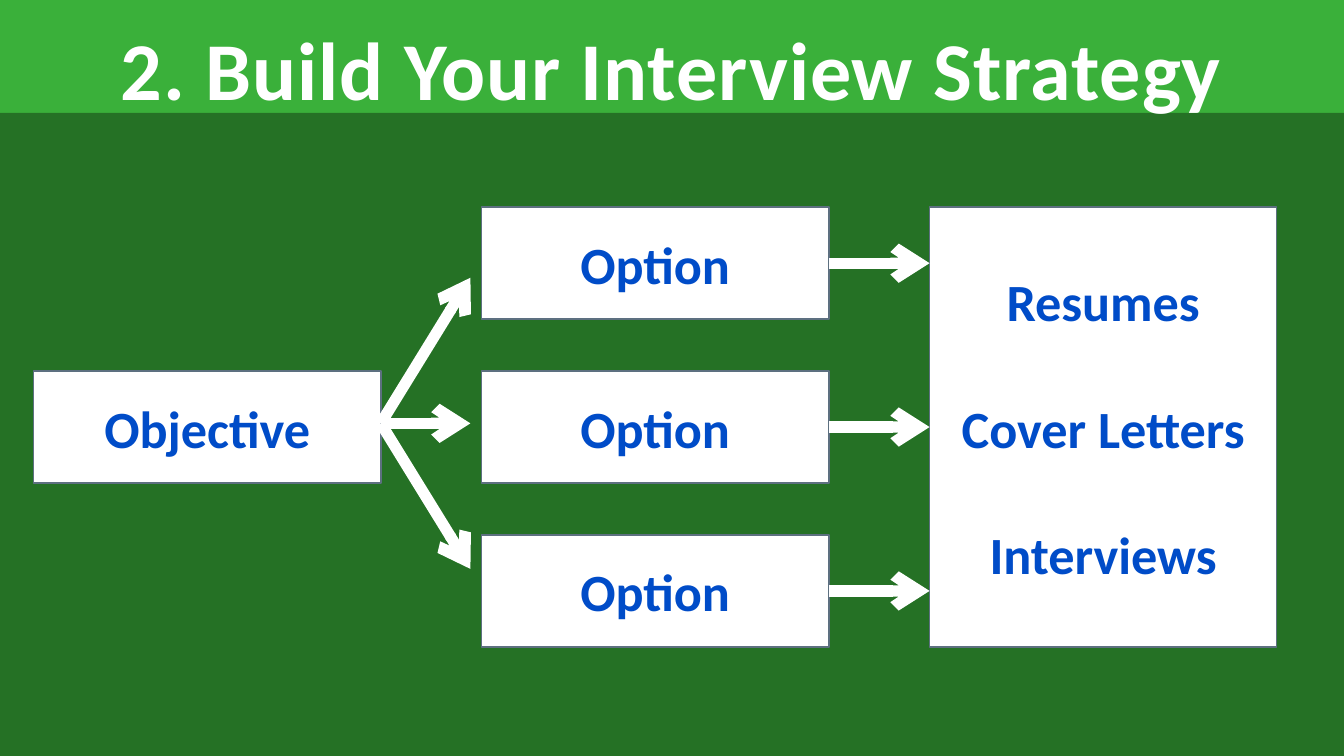
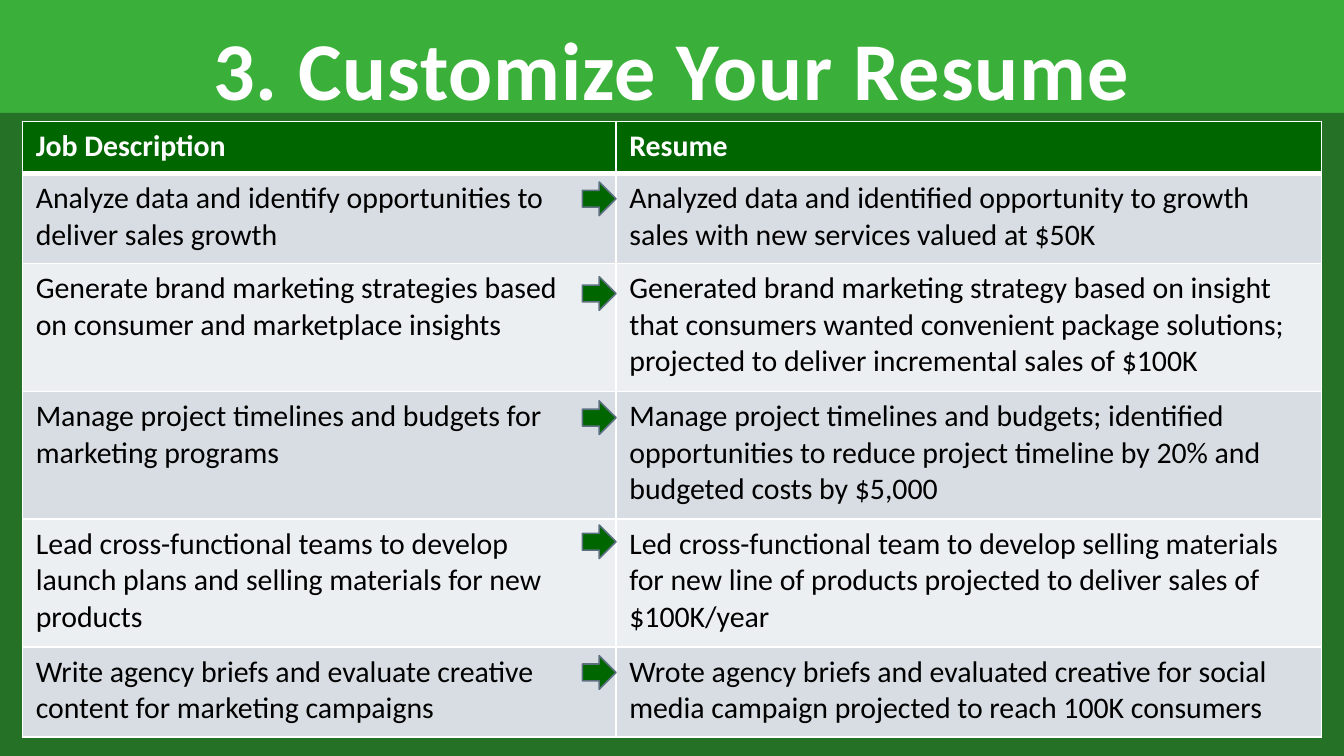
from lxml.etree import SubElement
from pptx import Presentation
from pptx.dml.color import RGBColor as RGB
from pptx.enum.shapes import MSO_CONNECTOR as Line, MSO_SHAPE as Kind
from pptx.enum.text import MSO_ANCHOR as Anchor, MSO_AUTO_SIZE as Fit, PP_ALIGN as Align
from pptx.oxml import parse_xml
from pptx.oxml.ns import nsdecls, qn
from pptx.util import Pt

FACE = "Calibri"
WHITE = RGB(0xFF, 0xFF, 0xFF)
BLACK = RGB(0, 0, 0)
GRAY = RGB(0x3F, 0x3F, 0x3F)
LIME = RGB(0x3A, 0xB0, 0x3A)
GREEN = RGB(0x25, 0x71, 0x25)
DEEP = RGB(0, 0x66, 0)
BLUE = RGB(0, 0x4C, 0xC8)
SLATE = RGB(0x5D, 0x70, 0x80)
BANDS = RGB(0xD8, 0xDD, 0xE3), RGB(0xEC, 0xEF, 0xF1)

WIDE, HIGH, HEAD = 720, 405, 60.5

PAIRS = [
    ("Job Description", "Resume"),
    ("Analyze data and identify opportunities to deliver sales growth",
     "Analyzed data and identified opportunity to growth sales with new services "
     "valued at $50K"),
    ("Generate brand marketing strategies based\non consumer and marketplace insights",
     "Generated brand marketing strategy based on insight that consumers wanted "
     "convenient package solutions; projected to deliver incremental sales of $100K"),
    ("Manage project timelines and budgets for marketing programs",
     "Manage project timelines and budgets; identified opportunities to reduce "
     "project timeline by 20% and budgeted costs by $5,000"),
    ("Lead cross-functional teams to develop\n"
     "launch plans and selling materials for new products",
     "Led cross-functional team to develop selling materials for new line of "
     "products projected to deliver sales of $100K/year"),
    ("Write agency briefs and evaluate creative content for marketing campaigns",
     "Wrote agency briefs and evaluated creative for social media campaign "
     "projected to reach 100K consumers"),
]
COLS = 318, 378
ROWS = 28, 48.25, 68.5, 68.5, 68.5, 48.25
DROPS = 4.5, 7, 5, 3, 4.5  # gap above the marker in each body row


def style(par, size, color, bold=False):
    font = par.font
    font.name, font.size, font.bold = FACE, Pt(size), bold
    font.color.rgb = color


def add_block(slide, kind, box, fill, edge=None):
    shape = slide.shapes.add_shape(kind, *map(Pt, box))
    shape.shadow.inherit = False
    shape.fill.solid()
    shape.fill.fore_color.rgb = fill
    if edge is None:
        shape.line.fill.background()
    else:
        shape.line.color.rgb = edge
        shape.line.width = Pt(0.85)
    return shape


def add_card(slide, box, *words):
    """Draw a white box with one spaced, centred paragraph per word."""
    frame = add_block(slide, Kind.RECTANGLE, box, WHITE, SLATE).text_frame
    frame.word_wrap = True
    frame.vertical_anchor = Anchor.MIDDLE
    frame.text = "\n".join(words)
    for i, par in enumerate(frame.paragraphs):
        par.alignment = Align.CENTER
        par.space_before = Pt(34 if i else 0)
        style(par, 28, BLUE, True)


def add_arrow(shapes, *ends):
    arrow = shapes.add_connector(Line.STRAIGHT, *map(Pt, ends))
    arrow.line.color.rgb = WHITE
    arrow.line.width = Pt(6)
    SubElement(arrow.line._get_or_add_ln(), qn("a:tailEnd"), type="arrow")
    SubElement(arrow._element.spPr, qn("a:effectLst"))


def dress_layout(deck, layout):
    """Give the layout its backdrop and the two colour bands."""
    fill = layout.background.fill
    fill.gradient()
    fill.gradient_angle = 270
    for stop, color, place in zip(fill.gradient_stops, (GRAY, BLACK), (0, 0.31)):
        stop.color.rgb = color
        stop.position = place
    slide = deck.slides[0]
    bands = (0, HEAD, WIDE, HIGH - HEAD, GREEN), (0, 0, WIDE, HEAD, LIME)
    for *box, color in bands:
        band = add_block(slide, Kind.RECTANGLE, box, color)
        layout.shapes.element.insert(2, band._element)


def add_slide(deck, layout, text):
    slide = deck.slides.add_slide(layout)
    title = slide.shapes.title
    title.left, title.top, title.width, title.height = map(Pt, (48, 4.25, 624, 48))
    frame = title.text_frame
    frame.text = text
    frame.auto_size = Fit.NONE
    frame.vertical_anchor = Anchor.TOP
    frame.margin_top, frame.margin_bottom = Pt(5.5), Pt(0)
    par = frame.paragraphs[0]
    par.alignment = Align.CENTER
    style(par, 44, WHITE, True)
    par._p.pPr.find(qn("a:defRPr")).set("spc", "50")
    return slide


def add_flow(slide, left, top):
    """Draw objective, options and results as three columns."""
    wide, high, step, pitch = 186, 60, 87.8, 240
    mids = [left + pitch * i for i in range(3)]
    add_card(slide, (mids[0], top + step, wide, high), "Objective")
    for i in range(3):
        add_card(slide, (mids[1], top + step * i, wide, high), "Option")
    add_card(slide, (mids[2], top, wide, 2 * step + high),
             "Resumes", "Cover Letters", "Interviews")

    fan = slide.shapes.add_group_shape().shapes
    start, hub = left + wide, top + step + 28
    for rise in (-78, 0, 78):
        add_arrow(fan, start, hub, start + 48, hub + rise)
    for i in range(3):
        y = top + step * i + high / 2
        add_arrow(slide.shapes, mids[1] + wide, y, mids[2], y)


def add_edges(cell, above, below):
    """Put white borders round a cell; only top and bottom vary in width."""
    props = cell._tc.get_or_add_tcPr()
    sides = ("L", 1), ("R", 1), ("T", above), ("B", below)
    for i, (side, width) in enumerate(sides):
        props.insert(i, parse_xml(
            f'<a:ln{side} {nsdecls("a")} w="{Pt(width)}"><a:solidFill>'
            f'<a:srgbClr val="{WHITE}"/></a:solidFill></a:ln{side}>'))


def add_grid(slide, left, top):
    """Draw the comparison table with a marker in each body row."""
    box = left, top, sum(COLS), sum(ROWS)
    grid = slide.shapes.add_table(len(ROWS), len(COLS), *map(Pt, box)).table
    for col, width in zip(grid.columns, COLS):
        col.width = Pt(width)
    for r, (row, height) in enumerate(zip(grid.rows, ROWS)):
        row.height = Pt(height)
        for cell, text in zip(row.cells, PAIRS[r]):
            cell.text = text
            cell.fill.solid()
            cell.fill.fore_color.rgb = BANDS[(r - 1) % 2] if r else DEEP
            for par in cell.text_frame.paragraphs:
                style(par, 16, BLACK if r else WHITE, not r)
            add_edges(cell, 3 if r == 1 else 1, 1 if r else 3)
    for r, drop in enumerate(DROPS, 1):
        y = top + sum(ROWS[:r]) + drop
        add_block(slide, Kind.RIGHT_ARROW, (left + COLS[0] - 18, y, 18, 18),
                  DEEP, SLATE)


def main():
    deck = Presentation()
    deck.slide_width, deck.slide_height = Pt(WIDE), Pt(HIGH)
    layout = deck.slide_layouts[5]
    plan = add_slide(deck, layout, "2. Build Your Interview Strategy")
    dress_layout(deck, layout)
    add_flow(plan, 18, 111)
    match = add_slide(deck, layout, "3. Customize Your Resume")
    add_grid(match, 12, 65)
    deck.save("out.pptx")


if __name__ == "__main__":
    main()
